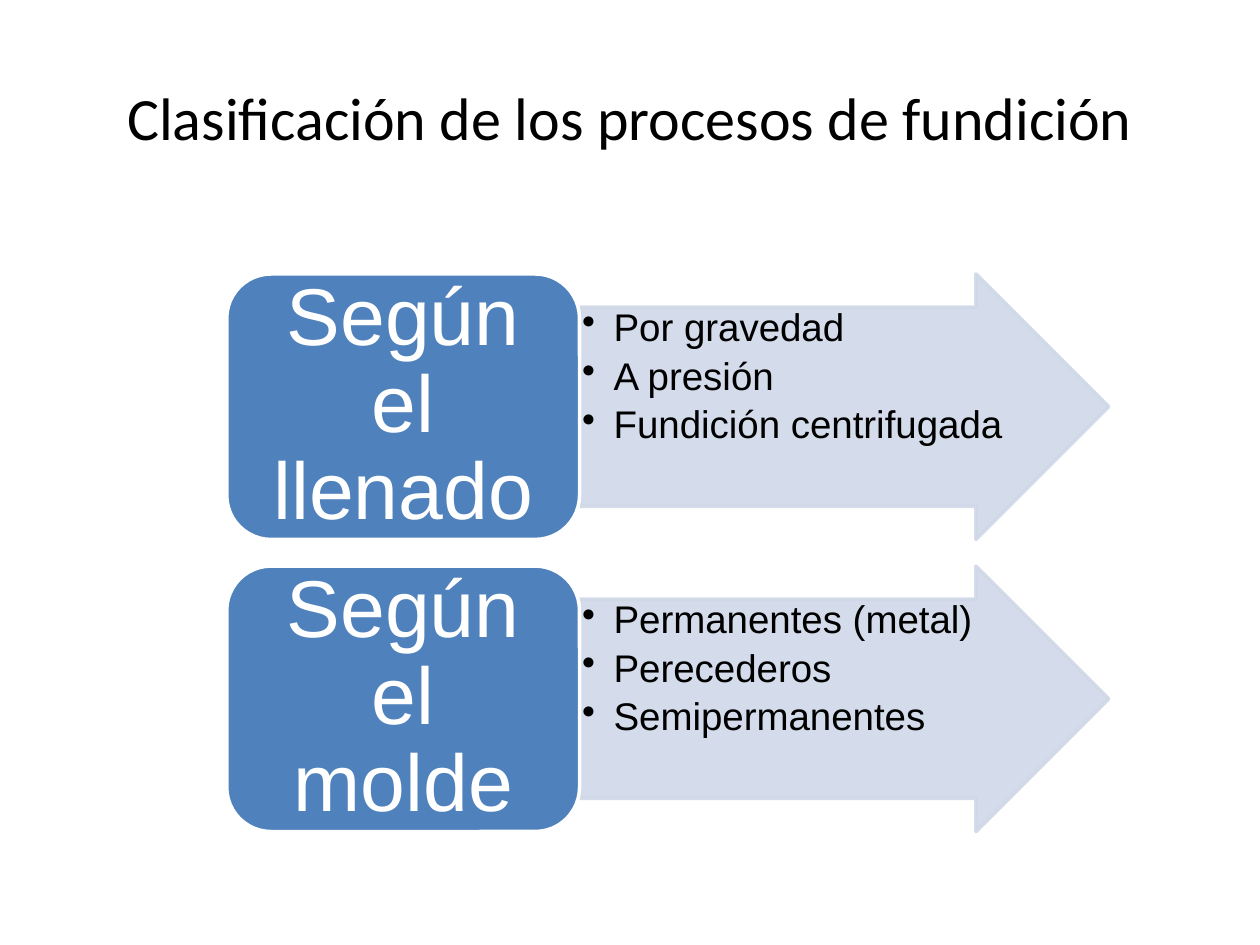
import dataclasses

import lxml.etree
import pptx
import pptx.dml.color
import pptx.enum.shapes
import pptx.enum.text
import pptx.oxml.ns
import pptx.util

SHAPES = pptx.enum.shapes.MSO_SHAPE
ALIGN = pptx.enum.text.PP_ALIGN
ANCHOR = pptx.enum.text.MSO_ANCHOR


@dataclasses.dataclass(frozen=True)
class Theme:
    ink: str = "000000"
    accent: str = "4F81BD"
    pale: str = "D0D8E8"
    paper: str = "FFFFFF"
    pale_opacity: int = 90
    title_font: str = "Calibri"
    body_font: str = "Arial"
    title_size: float = 34.3
    label_size: float = 46
    item_size: float = 22
    line_width: float = 2
    line_spacing: float = 0.9


@dataclasses.dataclass(frozen=True)
class Box:
    left: float
    top: float
    width: float
    height: float

    def share(self, left, top, width, height):
        return Box(
            self.left + left * self.width,
            self.top + top * self.height,
            width * self.width,
            height * self.height,
        )

    def inset(self, margin):
        return Box(
            self.left + margin,
            self.top + margin,
            self.width - 2 * margin,
            self.height - 2 * margin,
        )

    def lengths(self):
        return [
            pptx.util.Inches(value)
            for value in (self.left, self.top, self.width, self.height)
        ]


THEME = Theme()
PAGE = Box(0, 0, 10, 7.5)
TITLE = "Clasificación de los procesos de fundición"
CATEGORIES = [
    ("Según el llenado", ["Por gravedad", "A presión", "Fundición centrifugada"]),
    ("Según el molde", ["Permanentes (metal)", "Perecederos", "Semipermanentes"]),
]


def rgb(color):
    return pptx.dml.color.RGBColor.from_string(color)


def set_opacity(fill, percent):
    color = fill._xPr.find(pptx.oxml.ns.qn("a:solidFill"))[0]
    alpha = lxml.etree.SubElement(color, pptx.oxml.ns.qn("a:alpha"))
    alpha.set("val", str(percent * 1000))


def add_panel(shapes, kind, box, fill, line, opacity=100):
    shape = shapes.add_shape(kind, *box.lengths())
    shape.shadow.inherit = False
    shape.line.width = pptx.util.Pt(THEME.line_width)
    for paint, color in ((shape.fill, fill), (shape.line.fill, line)):
        paint.solid()
        paint.fore_color.rgb = rgb(color)
        if opacity < 100:
            set_opacity(paint, opacity)
    return shape


def add_text(shapes, box, text, font, size, color, align, anchor, margins=(0, 0)):
    frame = shapes.add_textbox(*box.lengths()).text_frame
    frame.word_wrap = True
    frame.vertical_anchor = anchor
    frame.margin_left = frame.margin_right = pptx.util.Inches(margins[0])
    frame.margin_top = frame.margin_bottom = pptx.util.Inches(margins[1])
    frame.text = text
    for paragraph in frame.paragraphs:
        paragraph.alignment = align
        for run in paragraph.runs:
            run.font.name = font
            run.font.size = pptx.util.Pt(size)
            run.font.color.rgb = rgb(color)
    return frame


def add_bullet(paragraph):
    paragraph.level = 1
    paragraph.line_spacing = THEME.line_spacing
    paragraph.space_after = pptx.util.Pt(0.18 * THEME.item_size)
    properties = paragraph._p.get_or_add_pPr()
    indent = pptx.util.Inches(0.25)
    properties.set("marL", str(indent))
    properties.set("indent", str(-indent))
    bullet = lxml.etree.SubElement(properties, pptx.oxml.ns.qn("a:buChar"))
    bullet.set("char", "•")


def add_title(slide, box):
    add_text(slide.shapes, box, TITLE, THEME.title_font, THEME.title_size,
             THEME.ink, ALIGN.CENTER, ANCHOR.MIDDLE)


def add_items(shapes, box, items):
    arrow = add_panel(shapes, SHAPES.RIGHT_ARROW, box, THEME.pale, THEME.pale,
                      THEME.pale_opacity)
    arrow.adjustments[0] = 0.75
    arrow.adjustments[1] = 0.5
    frame = add_text(shapes, box.share(0, 0.12, 0.81, 0.75), "\n".join(items),
                     THEME.body_font, THEME.item_size, THEME.ink,
                     ALIGN.LEFT, ANCHOR.TOP, (0.02, 0.02))
    for paragraph in frame.paragraphs:
        add_bullet(paragraph)


def add_label(shapes, box, label):
    add_panel(shapes, SHAPES.ROUNDED_RECTANGLE, box, THEME.accent, THEME.paper)
    frame = add_text(shapes, box.inset(0.1), label, THEME.body_font,
                     THEME.label_size, THEME.paper, ALIGN.CENTER,
                     ANCHOR.MIDDLE, (0.19, 0.1))
    frame.paragraphs[0].line_spacing = THEME.line_spacing


def add_categories(slide, box):
    shapes = slide.shapes.add_group_shape().shapes
    row_height = 1 / (len(CATEGORIES) + 0.1 * (len(CATEGORIES) - 1))
    for index, (label, items) in enumerate(CATEGORIES):
        row = box.share(0, 1.1 * index * row_height, 1, row_height)
        add_items(shapes, row.share(0.4, 0, 0.6, 1), items)
        add_label(shapes, row.share(0, 0, 0.4, 1), label)


def main():
    presentation = pptx.Presentation()
    presentation.slide_width = pptx.util.Inches(PAGE.width)
    presentation.slide_height = pptx.util.Inches(PAGE.height)
    slide = presentation.slides.add_slide(presentation.slide_layouts[6])
    slide.background.fill.solid()
    slide.background.fill.fore_color.rgb = rgb(THEME.paper)
    add_title(slide, PAGE.share(0.05, 0.04, 0.9, 1 / 6))
    add_categories(slide, PAGE.share(0.18, 0.29, 0.7, 0.59))
    presentation.save("out.pptx")


if __name__ == "__main__":
    main()
